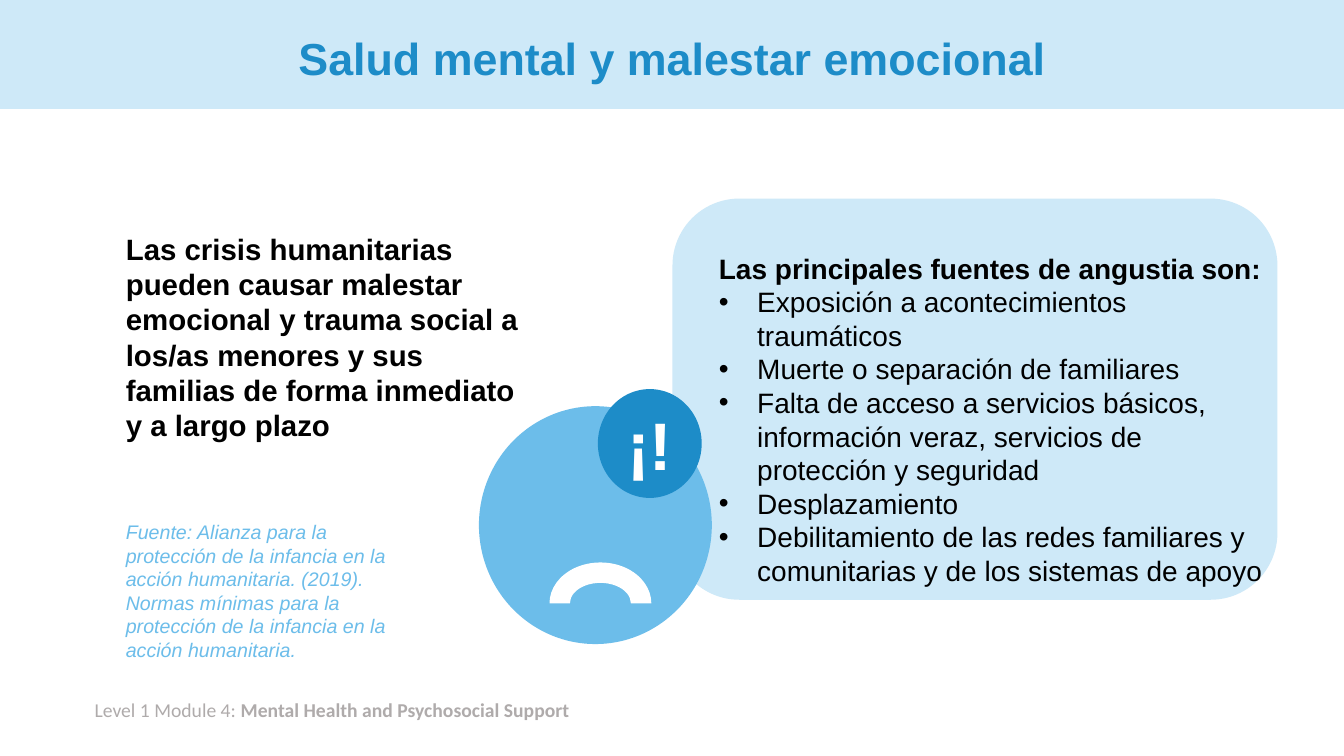
from lxml.etree import SubElement
from pptx import Presentation
from pptx.dml.color import RGBColor
from pptx.enum.shapes import MSO_SHAPE
from pptx.enum.text import MSO_ANCHOR, MSO_AUTO_SIZE, PP_ALIGN
from pptx.oxml.ns import qn
from pptx.util import Inches, Pt

PALE, SKY, BLUE = "CEE9F8", "6CBDEA", "1D8CC8"
BLACK, WHITE, GREY = "000000", "FFFFFF", "AFABAB"


def add_filled(shapes, preset, left, top, width, height, color):
    shape = shapes.add_shape(preset, Inches(left), Inches(top), Inches(width), Inches(height))
    shape.shadow.inherit = False
    shape.fill.solid()
    shape.fill.fore_color.rgb = RGBColor.from_string(color)
    shape.line.fill.background()
    return shape


def add_run(paragraph, text, size, color, bold=False, italic=False, font="Arial"):
    run = paragraph.add_run()
    run.text = text
    run.font.name = font
    run.font.size = Pt(size)
    run.font.bold = bold
    run.font.italic = italic
    run.font.color.rgb = RGBColor.from_string(color)


prs = Presentation()
prs.slide_width, prs.slide_height = Inches(13.33), Inches(7.5)
slide = prs.slides.add_slide(prs.slide_layouts[1])
title, sources = slide.placeholders

header_band = add_filled(slide.shapes, MSO_SHAPE.RECTANGLE, 0, 0, 13.33, 1.08, PALE)
sources_panel = add_filled(slide.shapes, MSO_SHAPE.ROUNDED_RECTANGLE, 6.67, 1.97, 6, 3.98, PALE)
for backdrop in (header_band, sources_panel):
    title._element.addprevious(backdrop._element)

title.left, title.top, title.width, title.height = map(Inches, (0.92, 0.13, 11.5, 0.95))
title.text_frame.vertical_anchor = MSO_ANCHOR.MIDDLE
title.text_frame.auto_size = MSO_AUTO_SIZE.NONE
heading = title.text_frame.paragraphs[0]
heading.alignment = PP_ALIGN.CENTER
heading.line_spacing = 0.9
add_run(heading, "Salud mental y malestar emocional", 32, BLUE, bold=True)

sources.left, sources.top, sources.width, sources.height = map(Inches, (7.03, 2.44, 5.64, 3.47))
sources.text_frame.vertical_anchor = MSO_ANCHOR.TOP
sources.text_frame.auto_size = MSO_AUTO_SIZE.NONE
source_lines = [
    "Las principales fuentes de angustia son:",
    "Exposición a acontecimientos traumáticos",
    "Muerte o separación de familiares",
    "Falta de acceso a servicios básicos, información veraz, servicios de protección y seguridad",
    "Desplazamiento",
    "Debilitamiento de las redes familiares y comunitarias y de los sistemas de apoyo",
]
for index, line in enumerate(source_lines):
    is_intro = index == 0
    paragraph = sources.text_frame.paragraphs[0] if is_intro else sources.text_frame.add_paragraph()
    paragraph.space_before = Pt(0)
    add_run(paragraph, line, 20, BLACK, bold=is_intro)
    properties = paragraph._p.get_or_add_pPr()
    indent = 0 if is_intro else Inches(0.38)
    properties.set("marL", str(indent))
    properties.set("indent", str(-indent))
    if is_intro:
        SubElement(properties, qn("a:buNone"))
    else:
        SubElement(properties, qn("a:buFont"), typeface="Arial")
        SubElement(properties, qn("a:buChar"), char="•")

statement = (
    "Las crisis humanitarias pueden causar malestar emocional y trauma social "
    "a los/as menores y sus familias de forma inmediato y a largo plazo"
)
citation = (
    "Fuente: Alianza para la protección de la infancia en la acción humanitaria. (2019). "
    "Normas mínimas para la protección de la infancia en la acción humanitaria."
)
text_blocks = [
    ((0.84, 6.87, 6.18, 0.34), [
        ("Level 1 Module 4: ", 14, GREY, False, False, "Calibri"),
        ("Mental Health and Psychosocial Support", 14, GREY, True, False, "Calibri"),
    ]),
    ((1.15, 5.11, 2.93, 1.51), [(citation, 14, SKY, False, True)]),
    ((1.15, 2.24, 4.2, 2.22), [(statement, 21, BLACK, True)]),
]
for place, runs in text_blocks:
    block = slide.shapes.add_textbox(*map(Inches, place))
    block.text_frame.word_wrap = True
    for run in runs:
        add_run(block.text_frame.paragraphs[0], *run)

distress = slide.shapes.add_group_shape().shapes
add_filled(distress, MSO_SHAPE.OVAL, 4.75, 4.03, 2.31, 2.36, SKY)
add_filled(distress, MSO_SHAPE.BLOCK_ARC, 5.45, 5.58, 1.01, 0.81, WHITE)
alert = add_filled(distress, MSO_SHAPE.OVAL, 5.93, 3.86, 1.03, 1.08, BLUE)
alert_frame = alert.text_frame
alert_frame.margin_left = alert_frame.margin_right = 0
alert_frame.margin_top = alert_frame.margin_bottom = 0
alert_frame.word_wrap = False
alert_frame.vertical_anchor = MSO_ANCHOR.MIDDLE
alert_mark = alert_frame.paragraphs[0]
alert_mark.alignment = PP_ALIGN.CENTER
add_run(alert_mark, "¡!", 48, WHITE, bold=True)

prs.save("out.pptx")
